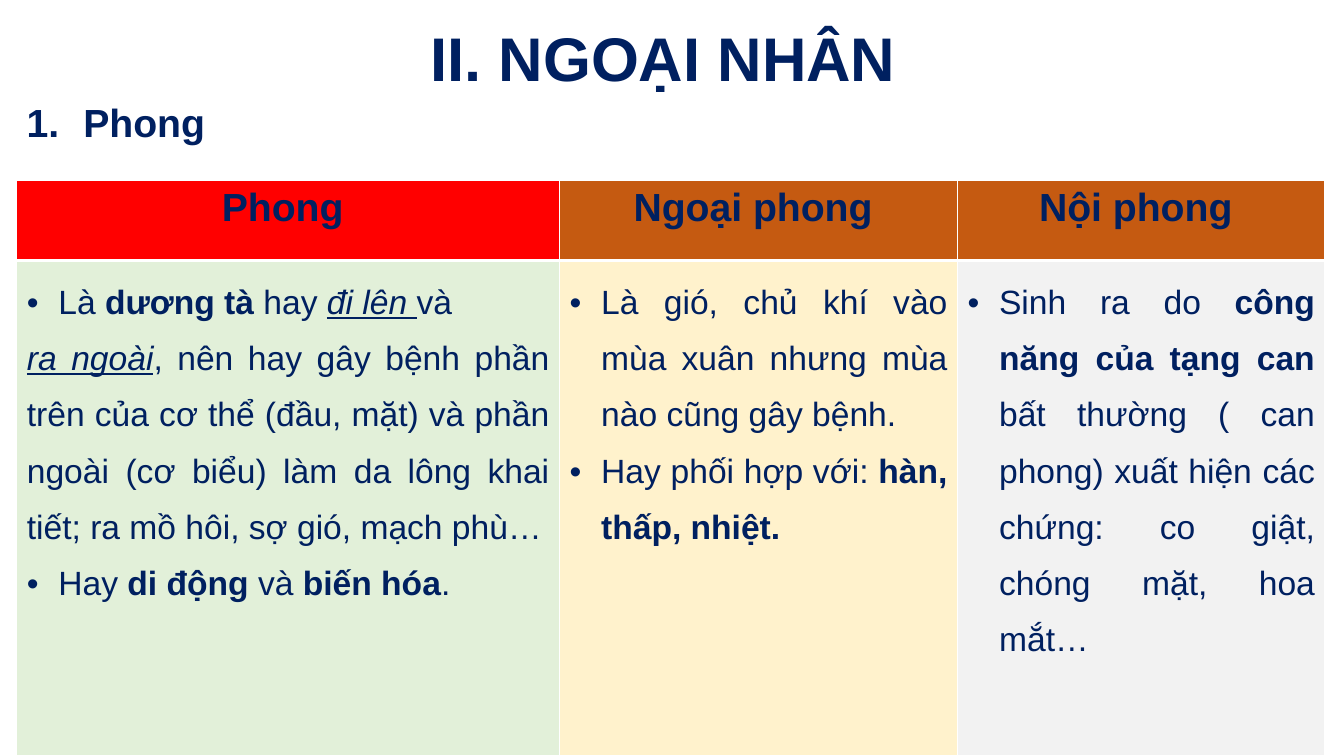
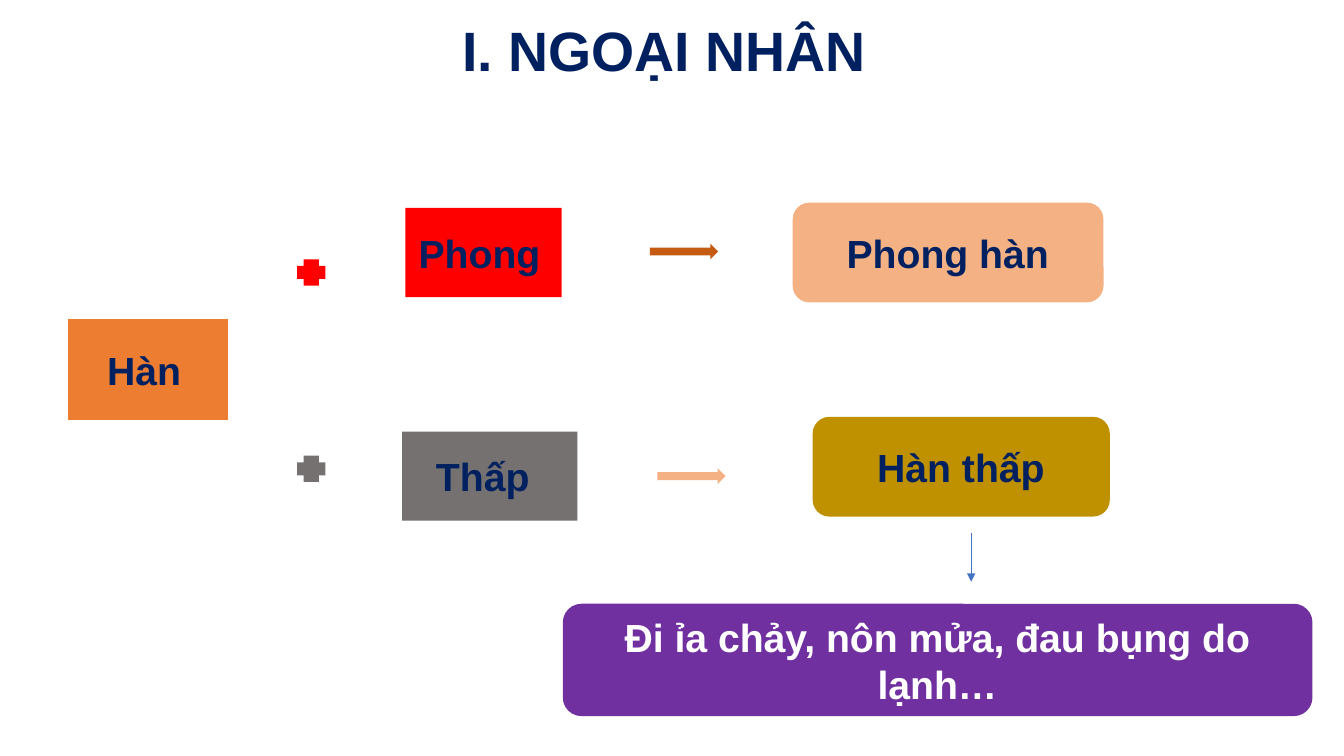
"""Build two slides on the external causes of disease: a table and a diagram."""
from dataclasses import dataclass
from typing import Optional

from lxml import etree
from pptx import Presentation
from pptx.dml.color import RGBColor
from pptx.enum.shapes import MSO_CONNECTOR, MSO_SHAPE
from pptx.enum.text import MSO_ANCHOR, PP_ALIGN
from pptx.oxml.ns import qn
from pptx.util import Emu, Pt

EMU_PER_PX = 9525
FONT = "Arial"
HEADING_PT, BODY_PT = 28, 24
INSET = 10
CENTER, JUSTIFY, LEFT = PP_ALIGN.CENTER, PP_ALIGN.JUSTIFY, PP_ALIGN.LEFT
MIDDLE, TOP = MSO_ANCHOR.MIDDLE, MSO_ANCHOR.TOP
RECT, ROUNDED = MSO_SHAPE.RECTANGLE, MSO_SHAPE.ROUNDED_RECTANGLE
PLUS, ARROW = MSO_SHAPE.CROSS, MSO_SHAPE.RIGHT_ARROW
STRAIGHT = MSO_CONNECTOR.STRAIGHT

COLORS = {
    "navy": "002060", "white": "FFFFFF", "red": "FF0000", "rust": "C55A11",
    "mint": "E2F0D9", "cream": "FFF2CC", "mist": "F2F2F2", "orange": "ED7D31",
    "peach": "F4B183", "gray": "767171", "gold": "BF9000", "purple": "7030A0",
    "blue": "4472C4",
}


@dataclass(frozen=True)
class Run:
    text: str
    bold: bool = False
    emphasis: bool = False


@dataclass(frozen=True)
class Paragraph:
    runs: tuple[Run, ...]
    size: float = BODY_PT
    color: str = "navy"
    align: PP_ALIGN = JUSTIFY
    spacing: float = 1.5
    before: int = 0
    bullet: Optional[str] = None
    indent: int = 30


@dataclass(frozen=True)
class Column:
    heading: str
    width: int
    heading_fill: str
    body_fill: str
    body: tuple[Paragraph, ...]


@dataclass(frozen=True)
class Node:
    kind: MSO_SHAPE
    left: int
    top: int
    width: int
    height: int
    fill: str
    label: str = ""
    color: str = "navy"
    right_inset: int = INSET


def px(length: int) -> Emu:
    return Emu(length * EMU_PER_PX)


def rgb(name: str) -> RGBColor:
    return RGBColor.from_string(COLORS[name])


def heading(text: str, color: str = "navy") -> Paragraph:
    return Paragraph((Run(text, bold=True),), HEADING_PT, color, CENTER, 1.0)


def bulleted(*runs: Run) -> Paragraph:
    return Paragraph(runs, bullet="•")


def add_bullet(paragraph, item: Paragraph) -> None:
    properties = paragraph._p.get_or_add_pPr()
    properties.set("marL", str(px(item.indent)))
    properties.set("indent", str(-px(item.indent)))
    if item.bullet == "1.":
        etree.SubElement(properties, qn("a:buFont"), typeface="+mj-lt")
        etree.SubElement(properties, qn("a:buAutoNum"), type="arabicPeriod")
    else:
        etree.SubElement(properties, qn("a:buFont"), typeface=FONT)
        etree.SubElement(properties, qn("a:buChar"), char=item.bullet)


def write(frame, items: tuple[Paragraph, ...]) -> None:
    for index, item in enumerate(items):
        paragraph = frame.add_paragraph() if index else frame.paragraphs[0]
        paragraph.alignment = item.align
        paragraph.line_spacing = item.spacing
        paragraph.space_before = Pt(item.before)
        if item.bullet:
            add_bullet(paragraph, item)
        for part in item.runs:
            run = paragraph.add_run()
            run.text = part.text
            run.font.name = FONT
            run.font.size = Pt(item.size)
            run.font.bold = part.bold
            run.font.italic = run.font.underline = part.emphasis
            run.font.color.rgb = rgb(item.color)


def add_text(slide, left: int, top: int, width: int, height: int,
             item: Paragraph, anchor: MSO_ANCHOR = TOP) -> None:
    box = slide.shapes.add_textbox(px(left), px(top), px(width), px(height))
    box.text_frame.word_wrap = True
    box.text_frame.vertical_anchor = anchor
    write(box.text_frame, (item,))


def add_title(slide, text: str, size: float, top: int, height: int) -> None:
    title = Paragraph((Run(text, bold=True),), size, align=CENTER, spacing=0.9)
    add_text(slide, 88, top, 1104, height, title, MIDDLE)


def add_borders(cell, top_pt: int, bottom_pt: int) -> None:
    properties = cell._tc.get_or_add_tcPr()
    for side, width in (("L", 1), ("R", 1), ("T", top_pt), ("B", bottom_pt)):
        line = etree.SubElement(properties, qn(f"a:ln{side}"), w=str(Pt(width)))
        fill = etree.SubElement(line, qn("a:solidFill"))
        etree.SubElement(fill, qn("a:srgbClr"), val=COLORS["white"])


def add_columns(slide, left: int, top: int, row_heights: tuple[int, int],
                columns: tuple[Column, ...]) -> None:
    width = sum(column.width for column in columns)
    table = slide.shapes.add_table(
        len(row_heights), len(columns), px(left), px(top),
        px(width), px(sum(row_heights))).table
    for row, height in zip(table.rows, row_heights):
        row.height = px(height)
    for index, column in enumerate(columns):
        table.columns[index].width = px(column.width)
        contents = (
            (column.heading_fill, (heading(column.heading),), 1, 3),
            (column.body_fill, column.body, 3, 1),
        )
        for row_index, (fill, items, top_pt, bottom_pt) in enumerate(contents):
            cell = table.cell(row_index, index)
            add_borders(cell, top_pt, bottom_pt)
            cell.fill.solid()
            cell.fill.fore_color.rgb = rgb(fill)
            write(cell.text_frame, items)


def add_node(slide, node: Node) -> None:
    shape = slide.shapes.add_shape(
        node.kind, px(node.left), px(node.top), px(node.width), px(node.height))
    shape.shadow.inherit = False
    shape.fill.solid()
    shape.fill.fore_color.rgb = rgb(node.fill)
    shape.line.fill.background()
    if node.label:
        frame = shape.text_frame
        frame.word_wrap = True
        frame.vertical_anchor = MIDDLE
        frame.margin_right = px(node.right_inset)
        write(frame, (heading(node.label, node.color),))


def add_down_arrow(slide, x: int, top: int, bottom: int) -> None:
    arrow = slide.shapes.add_connector(
        STRAIGHT, px(x), px(top), px(x), px(bottom))
    arrow.line.color.rgb = rgb("blue")
    arrow.line.width = Pt(0.5)
    etree.SubElement(arrow.line._get_or_add_ln(), qn("a:tailEnd"), type="triangle")
    etree.SubElement(arrow._element.spPr, qn("a:effectLst"))


WIND_COLUMNS = (
    Column("Phong ", 517, "red", "mint", (
        bulleted(Run("Là "), Run("dương tà ", bold=True), Run("hay "),
                 Run("đi lên ", emphasis=True), Run("và ")),
        Paragraph((
            Run("ra ngoài", emphasis=True),
            Run(", nên hay gây bệnh phần trên của cơ thể (đầu, mặt) và phần "
                "ngoài (cơ biểu) làm da lông khai tiết; ra mồ hôi, sợ gió, "
                "mạch phù…"))),
        bulleted(Run("Hay "), Run("di động ", bold=True), Run("và "),
                 Run("biến hóa", bold=True), Run(".")),
    )),
    Column("Ngoại phong ", 379, "rust", "cream", (
        bulleted(Run("Là gió, chủ khí vào mùa xuân nhưng mùa nào cũng gây bệnh.")),
        bulleted(Run("Hay phối hợp với: "), Run("hàn, thấp, nhiệt.", bold=True)),
    )),
    Column("Nội phong ", 350, "rust", "mist", (
        bulleted(Run("Sinh ra do "), Run("công năng của tạng can ", bold=True),
                 Run("bất thường ( can phong) xuất hiện các chứng: co giật, "
                     "chóng mặt, hoa mắt…")),
    )),
)

COLD_NODES = (
    Node(RECT, 65, 304, 152, 96, "orange", "Hàn", right_inset=17),
    Node(PLUS, 283, 247, 27, 25, "red"),
    Node(RECT, 386, 198, 149, 85, "red", "Phong", right_inset=17),
    Node(ARROW, 619, 232, 65, 15, "rust"),
    Node(ROUNDED, 755, 193, 296, 95, "peach", "Phong hàn"),
    Node(PLUS, 283, 434, 27, 25, "gray"),
    Node(RECT, 383, 411, 167, 85, "gray", "Thấp", right_inset=23),
    Node(ARROW, 626, 446, 65, 15, "peach"),
    Node(ROUNDED, 774, 397, 283, 95, "gold", "Hàn thấp"),
    Node(ROUNDED, 536, 575, 714, 107, "purple",
         "Đi ỉa chảy, nôn mửa, đau bụng do lạnh…", "white"),
)


def build_wind(slide) -> None:
    add_title(slide, "II. NGOẠI NHÂN ", 44, 16, 86)
    add_text(slide, 16, 94, 1187, 60, Paragraph(
        (Run("Phong", bold=True),), HEADING_PT, align=LEFT, spacing=0.9,
        before=10, bullet="1.", indent=54))
    add_columns(slide, 16, 172, (76, 472), WIND_COLUMNS)


def build_cold(slide) -> None:
    add_title(slide, "I. NGOẠI NHÂN ", 39.6, 18, 66)
    for node in COLD_NODES:
        add_node(slide, node)
    add_down_arrow(slide, 925, 508, 554)


def main() -> None:
    deck = Presentation()
    deck.slide_width, deck.slide_height = px(1280), px(720)
    blank = deck.slide_layouts[6]
    for build in (build_wind, build_cold):
        build(deck.slides.add_slide(blank))
    deck.save("out.pptx")


if __name__ == "__main__":
    main()
